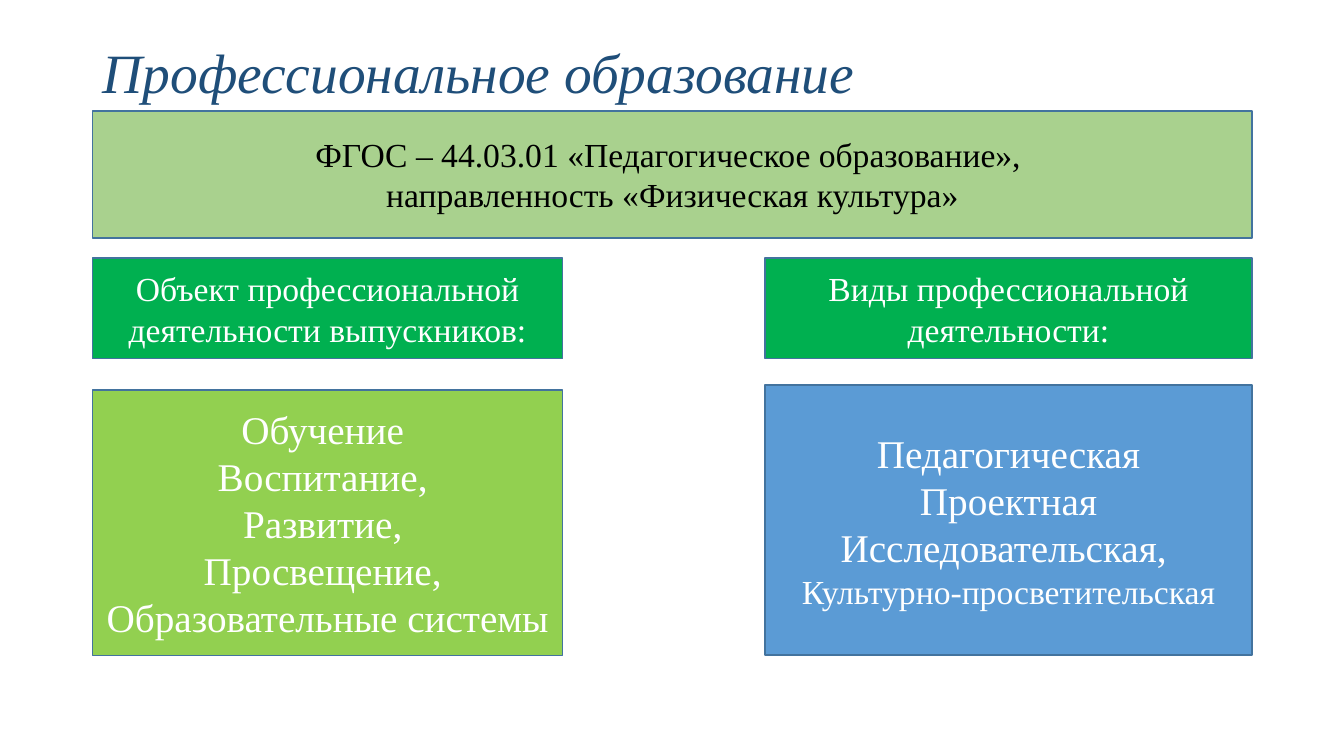
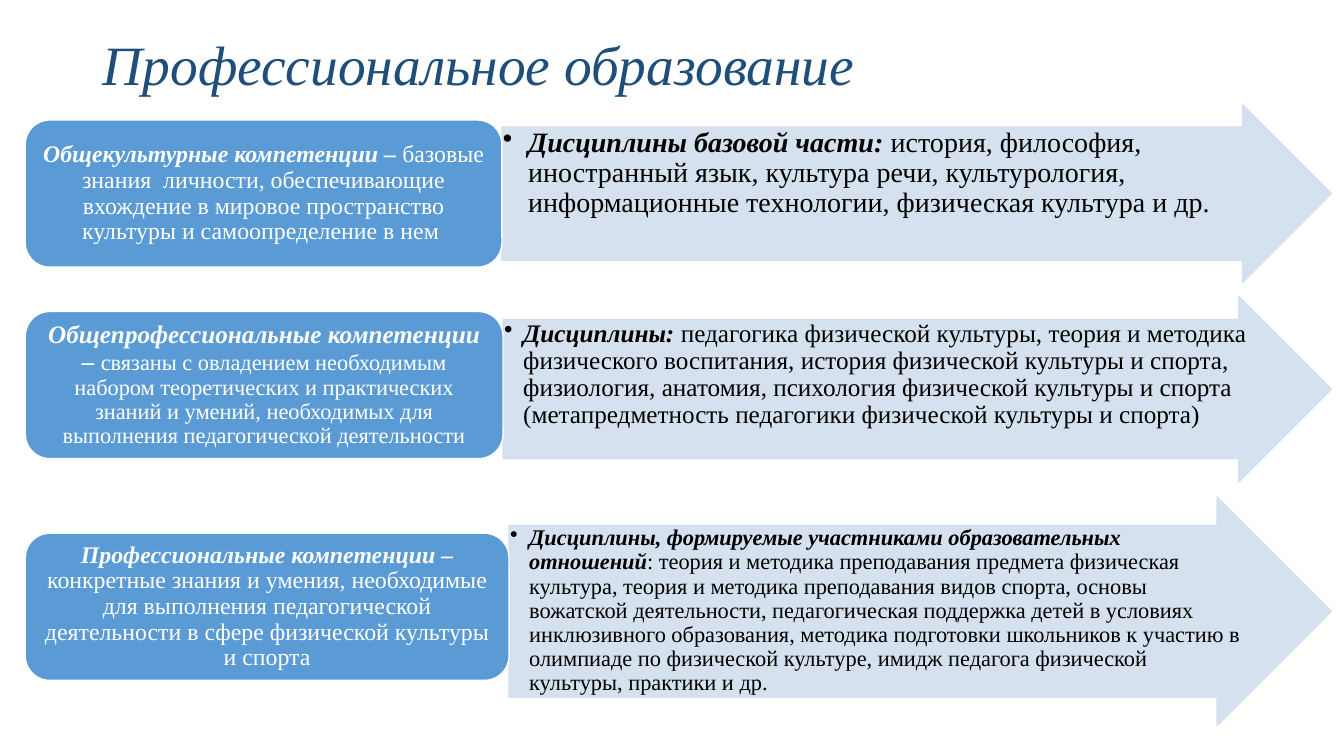
from dataclasses import dataclass

from lxml import etree
from pptx import Presentation
from pptx import util as u
from pptx.dml.color import RGBColor
from pptx.enum import shapes, text
from pptx.oxml.ns import qn


@dataclass(frozen=True)
class Theme:
    """Colours and type sizes shared by the slides."""
    font: str = "Times New Roman"
    title: str = "1F4E79"
    ink: str = "000000"
    paper: str = "FFFFFF"
    outline: str = "43739E"
    sage: str = "A9D18E"
    green: str = "00B050"
    lime: str = "92D050"
    blue: str = "5B9BD5"
    mist: str = "D2DEEF"
    title_size: float = 39.6
    item_size: int = 28
    head_size: int = 24
    spacing: float = 0.9
    opacity: int = 90


class Deck:
    """Holds the style and the current slide; lengths are percent of the slide."""

    def __init__(self, theme):
        """Start an empty widescreen presentation."""
        self.theme = theme
        self.file = Presentation()
        self.file.slide_width, self.file.slide_height = u.Inches(13.333), u.Inches(7.5)
        self.slide = None

    def place(self, left, top, width, height):
        """Turn percentages into slide lengths."""
        across, down = self.file.slide_width / 100, self.file.slide_height / 100
        return [int(left * across), int(top * down), int(width * across), int(height * down)]

    def style(self, paragraph, size, colour):
        """Set the font that all runs of a paragraph share."""
        paragraph.font.name = self.theme.font
        paragraph.font.size = u.Pt(size)
        paragraph.font.color.rgb = RGBColor.from_string(colour)

    def start(self, heading, top, height):
        """Add a blank slide with its heading."""
        self.slide = self.file.slides.add_slide(self.file.slide_layouts[6])
        frame = self.slide.shapes.add_textbox(*self.place(LEFT, top, WIDTH, height)).text_frame
        frame.word_wrap = True
        frame.vertical_anchor = text.MSO_ANCHOR.MIDDLE
        line = frame.paragraphs[0]
        line.text = heading
        line.line_spacing = self.theme.spacing
        self.style(line, self.theme.title_size, self.theme.title)
        line.font.italic = True

    def shape(self, kind, area, fill, outline):
        """Add a flat filled shape with wrapped text."""
        body = self.slide.shapes.add_shape(kind, *self.place(*area))
        body.shadow.inherit = False
        body.fill.solid()
        body.fill.fore_color.rgb = RGBColor.from_string(fill)
        body.line.color.rgb = RGBColor.from_string(outline)
        body.line.width = u.Pt(1)
        body.text_frame.word_wrap = True
        body.text_frame.vertical_anchor = text.MSO_ANCHOR.MIDDLE
        return body

    def card(self, area, fill, colour, lines):
        """Add a rectangle with centred (text, size) lines."""
        frame = self.shape(shapes.MSO_SHAPE.RECTANGLE, area, fill, self.theme.outline).text_frame
        for index, (words, size) in enumerate(lines):
            line = frame.add_paragraph() if index else frame.paragraphs[0]
            line.text = words
            line.alignment = text.PP_ALIGN.CENTER
            self.style(line, size, colour)

    def definition(self, frame, margins, align, colour, term, meaning, sizes):
        """Write a bold italic term followed by its plain meaning."""
        frame.margin_left = frame.margin_right = u.Inches(margins[0])
        frame.margin_top = frame.margin_bottom = u.Inches(margins[1])
        line = frame.paragraphs[0]
        line.alignment = align
        line.line_spacing = self.theme.spacing
        self.style(line, sizes[-1], colour)
        lead = line.add_run()
        lead.text = term
        lead.font.bold = lead.font.italic = True
        if sizes[0] != sizes[-1]:
            lead.font.size = u.Pt(sizes[0])
        line.add_run().text = meaning
        return line

    def competence(self, area, term, meaning, sizes):
        """Add a rounded box defining a competence."""
        box = self.shape(shapes.MSO_SHAPE.ROUNDED_RECTANGLE, area, self.theme.blue, self.theme.paper)
        self.definition(box.text_frame, (0.07, 0.04), text.PP_ALIGN.CENTER,
                        self.theme.paper, term, meaning, sizes)

    def disciplines(self, area, term, meaning, size, indent):
        """Add a translucent arrow with a bulleted list of disciplines."""
        arrow = self.shape(shapes.MSO_SHAPE.RIGHT_ARROW, area, self.theme.mist, self.theme.mist)
        arrow.adjustments[0], arrow.adjustments[1] = 0.75, 0.5
        for colour in list(arrow.element.spPr.iter(qn("a:srgbClr"))):
            etree.SubElement(colour, qn("a:alpha")).set("val", str(self.theme.opacity * 1000))
        arrow.text_frame.vertical_anchor = text.MSO_ANCHOR.TOP
        line = self.definition(arrow.text_frame, (0.01, 0.01), text.PP_ALIGN.LEFT,
                               self.theme.ink, term, meaning, (size,))
        props = line.font._element.getparent()
        props.set("marL", str(u.Inches(indent)))
        props.set("indent", str(-u.Inches(indent)))
        bullet = etree.Element(qn("a:buChar"))
        bullet.set("char", "•")
        line.font._element.addprevious(bullet)


HEADING = "Профессиональное образование"
LEFT, WIDTH = 6.9, 86.25
RIGHT = LEFT + WIDTH
CARD_BOTTOM = 86.67
PILL_LEFT, PILL_HEIGHT, ARROW_TIP = 1.88, 19.47, 99.07

COMPETENCES = [
    dict(arrow=(37.35, 13.87, 23.47), pill_top=15.87, pill_sizes=(17,), size=20, indent=0.25,
         term="Общекультурные компетенции – ",
         meaning="базовые знания  личности, обеспечивающие вхождение в мировое пространство "
                 "культуры и самоопределение в нем ",
         group="Дисциплины базовой части: ",
         subjects="история, философия, иностранный язык, культура речи, культурология, "
                  "информационные технологии, физическая культура и др."),
    dict(arrow=(37.43, 39.2, 24.53), pill_top=41.2, pill_sizes=(18, 16), size=18, indent=0.19,
         term="Общепрофессиональные компетенции – ",
         meaning="связаны с овладением необходимым набором теоретических и практических знаний "
                 "и умений, необходимых для выполнения педагогической деятельности",
         group="Дисциплины:",
         subjects=" педагогика физической культуры, теория и методика физического воспитания, "
                  "история физической культуры и спорта, физиология, анатомия, психология "
                  "физической культуры и спорта (метапредметность педагогики физической "
                  "культуры и спорта)"),
    dict(arrow=(37.88, 65.73, 30.27), pill_top=70.53, pill_sizes=(17,), size=16, indent=0.19,
         term="Профессиональные компетенции – ",
         meaning="конкретные знания и умения, необходимые для выполнения педагогической "
                 "деятельности в сфере физической культуры и спорта",
         group="Дисциплины, формируемые участниками образовательных отношений",
         subjects=": теория и методика преподавания предмета физическая культура, теория и "
                  "методика преподавания видов спорта, основы вожатской деятельности, "
                  "педагогическая поддержка детей в условиях инклюзивного образования, методика "
                  "подготовки школьников к участию в олимпиаде по физической культуре, имидж "
                  "педагога физической культуры, практики и др."),
]


def standard_slide(deck):
    """Build the slide on the standard, its object and its activities."""
    theme = deck.theme
    head, item = theme.head_size, theme.item_size
    deck.start(HEADING, 5.33, 9.33)
    deck.card((LEFT, 14.67, WIDTH, 16.8), theme.sage, theme.ink, [
        ("ФГОС – 44.03.01 «Педагогическое образование», ", head),
        ("направленность «Физическая культура»", head)])
    columns = [
        (LEFT, 34.95, 51.6, theme.lime, "Объект профессиональной деятельности выпускников:",
         [("Обучение ", item), ("Воспитание, ", item), ("Развитие, ", item),
          ("Просвещение, ", item), ("Образовательные системы", item)]),
        (56.93, RIGHT - 56.93, 50.93, theme.blue, "Виды профессиональной деятельности:",
         [("Педагогическая", item), (" Проектная ", item), ("Исследовательская, ", item),
          ("Культурно-просветительская", head)]),
    ]
    for left, width, top, fill, topic, items in columns:
        deck.card((left, 34.13, width, 13.33), theme.green, theme.paper, [(topic, head)])
        deck.card((left, top, width, CARD_BOTTOM - top), fill, theme.paper, items)


def competence_slide(deck):
    """Build the slide pairing competences with disciplines."""
    deck.start(HEADING, 4.13, 9.73)
    for row in COMPETENCES:
        left, top, height = row["arrow"]
        deck.disciplines((left, top, ARROW_TIP - left, height),
                         row["group"], row["subjects"], row["size"], row["indent"])
        deck.competence((PILL_LEFT, row["pill_top"], left - PILL_LEFT, PILL_HEIGHT),
                        row["term"], row["meaning"], row["pill_sizes"])


def main():
    """Build and save the presentation."""
    deck = Deck(Theme())
    standard_slide(deck)
    competence_slide(deck)
    deck.file.save("out.pptx")


if __name__ == "__main__":
    main()
